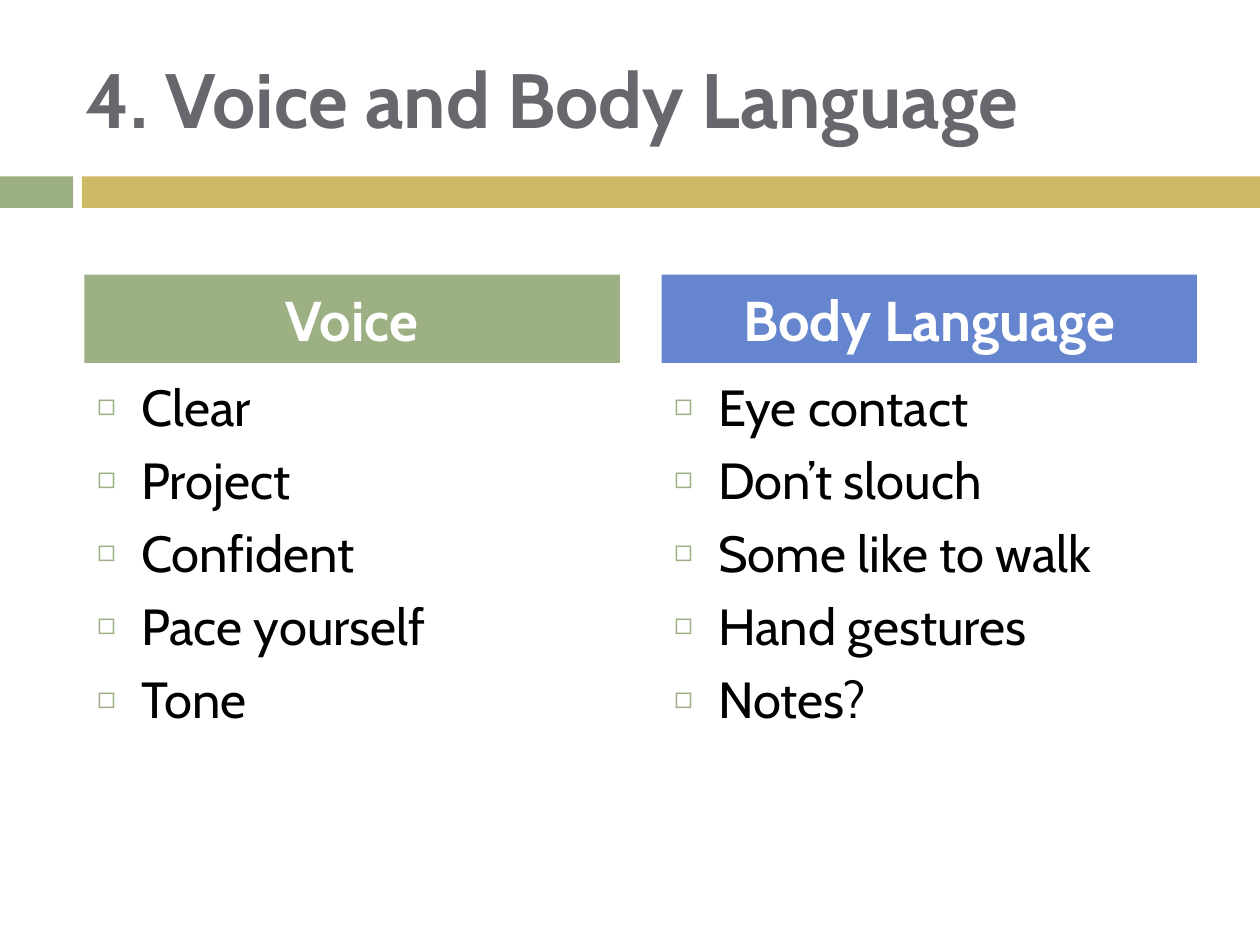
from lxml import etree
from pptx import Presentation
from pptx.dml.color import RGBColor
from pptx.enum.shapes import MSO_SHAPE
from pptx.enum.text import MSO_ANCHOR, MSO_AUTO_SIZE, PP_ALIGN
from pptx.oxml.ns import qn
from pptx.util import Inches, Pt

RECTANGLE = MSO_SHAPE.RECTANGLE
TOP, MIDDLE = MSO_ANCHOR.TOP, MSO_ANCHOR.MIDDLE
LEFT, CENTER = PP_ALIGN.LEFT, PP_ALIGN.CENTER
NO_AUTOFIT = MSO_AUTO_SIZE.NONE
COMPARISON_LAYOUT = 4

COLORS = {
    "green": "9CB084",
    "gold": "CEB966",
    "blue": "6585CF",
    "gray": "69676D",
    "black": "000000",
    "white": "FFFFFF",
}

COLUMNS = [
    ("Voice", "green", ["Clear", "Project", "Confident", "Pace yourself", "Tone"]),
    ("Body Language", "blue",
     ["Eye contact", "Don’t slouch", "Some like to walk", "Hand gestures", "Notes?"]),
]


class PageBuilder:
    """Style of the deck and the page being filled."""

    font = "Cabin"

    def __init__(self, page):
        self.page = page

    def color(self, name):
        return RGBColor.from_string(COLORS[name])

    def fill(self, shape, name):
        shape.fill.solid()
        shape.fill.fore_color.rgb = self.color(name)

    def bar(self, left, top, width, height, color):
        shape = self.page.shapes.add_shape(
            RECTANGLE, Inches(left), Inches(top), Inches(width), Inches(height))
        shape.shadow.inherit = False
        self.fill(shape, color)
        shape.line.fill.background()

    def text(self, index, area, lines, size, color, bold=False,
             anchor=MIDDLE, align=LEFT, before=0):
        box = self.page.placeholders[index]
        box.left, box.top, box.width, box.height = map(Inches, area)
        frame = box.text_frame
        frame.text = "\n".join(lines)
        frame.word_wrap = True
        frame.auto_size = NO_AUTOFIT
        frame.vertical_anchor = anchor
        for para in frame.paragraphs:
            para.alignment = align
            para.space_before = Pt(before)
            for span in para.runs:
                span.font.name = self.font
                span.font.size = Pt(size)
                span.font.bold = bold
                span.font.color.rgb = self.color(color)
        return box

    def title(self, area, words):
        self.text(0, area, [words], 44, "gray", bold=True)

    def header(self, index, area, words, color):
        box = self.text(index, area, [words], 32, "white", bold=True,
                        align=CENTER, before=7)
        self.fill(box, color)

    def bullets(self, index, area, lines):
        box = self.text(index, area, lines, 29, "black", anchor=TOP, before=7)
        for para in box.text_frame.paragraphs:
            props = para._p.get_or_add_pPr()
            props.set("marL", str(Inches(0.35)))
            props.set("indent", str(-Inches(0.35)))
            tint = etree.SubElement(props, qn("a:buClr"))
            etree.SubElement(tint, qn("a:srgbClr"), val=COLORS["green"])
            etree.SubElement(props, qn("a:buSzPct"), val="60000")
            etree.SubElement(props, qn("a:buChar"), char="◻")


def main():
    deck = Presentation()
    deck.slide_width, deck.slide_height = Inches(10), Inches(7.5)
    page = deck.slides.add_slide(deck.slide_layouts[COMPARISON_LAYOUT])
    builder = PageBuilder(page)

    builder.bar(0, 1.4, 0.58, 0.25, "green")
    builder.bar(0.65, 1.4, 9.35, 0.25, "gold")
    builder.title((0.58, 0.3, 8.92, 0.95), "4. Voice and Body Language")
    for number, (heading, color, lines) in enumerate(COLUMNS):
        left = 0.67 + number * 4.58
        builder.header(1 + 2 * number, (left, 2.18, 4.25, 0.7), heading, color)
        builder.bullets(2 + 2 * number, (left, 2.93, 4.25, 3.92), lines)

    deck.save("out.pptx")


if __name__ == "__main__":
    main()
